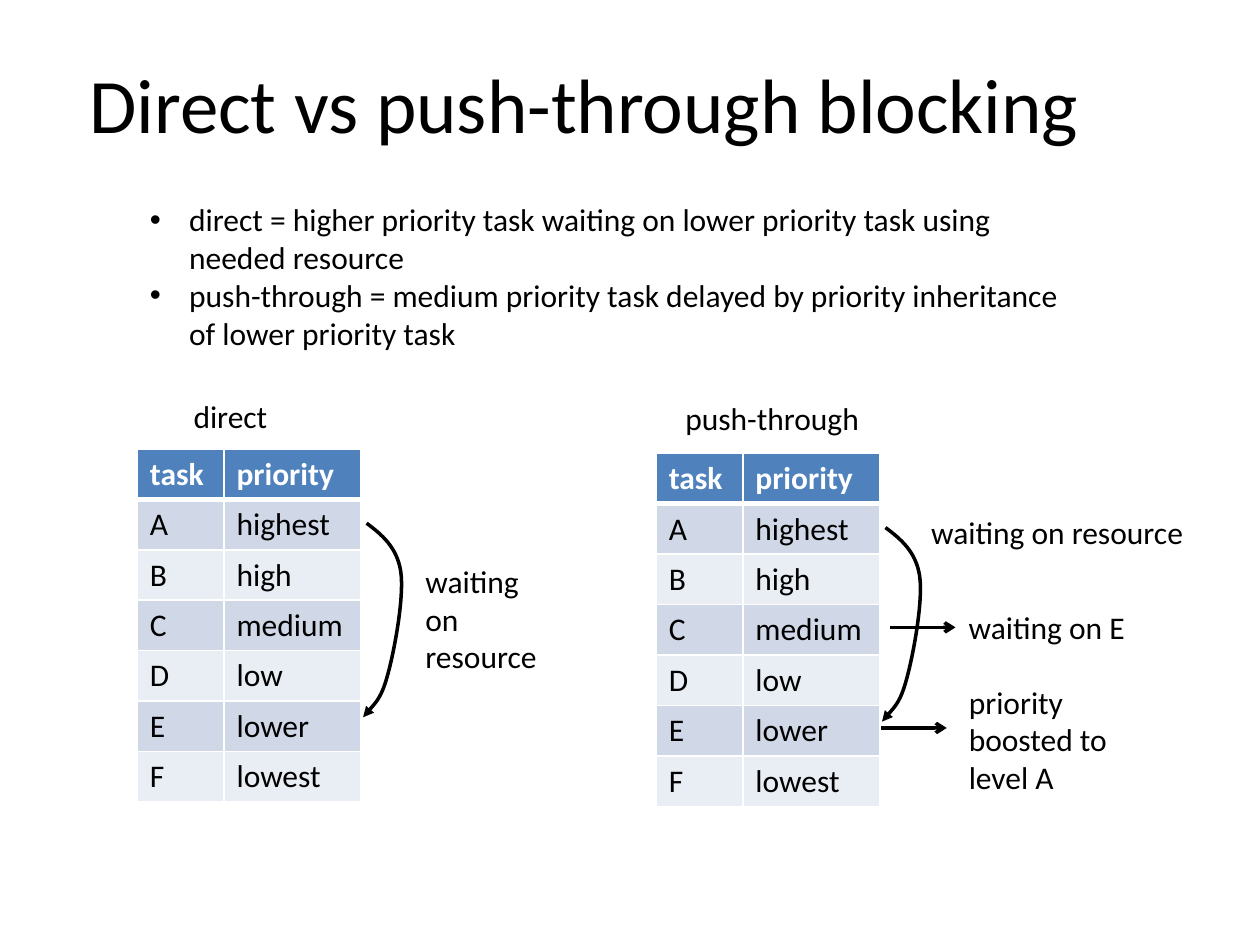
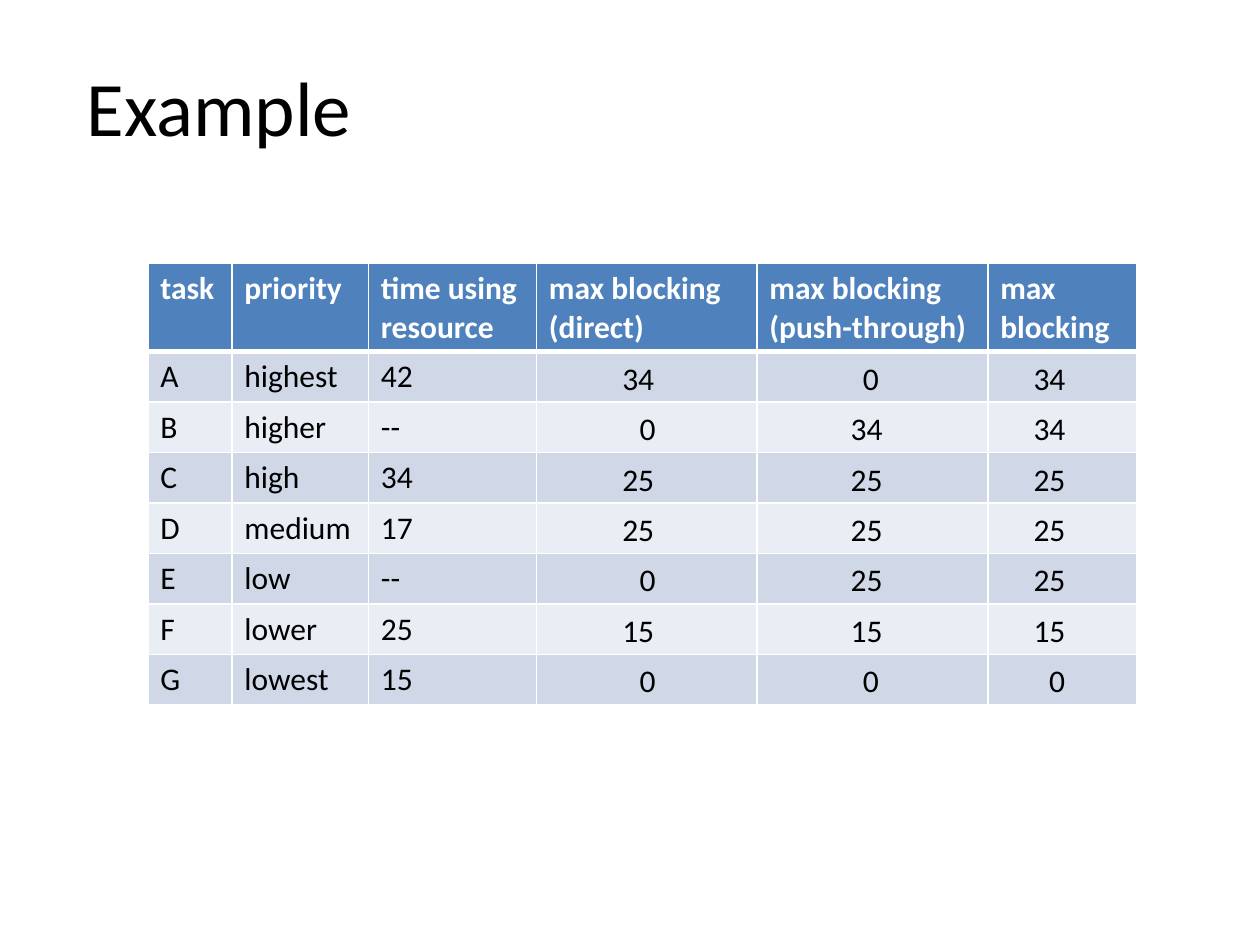
from lxml import etree
from pptx import Presentation
from pptx.dml.color import RGBColor
from pptx.enum.shapes import MSO_CONNECTOR
from pptx.oxml.ns import qn
from pptx.util import Pt

STRAIGHT = MSO_CONNECTOR.STRAIGHT
FONT = "Calibri"
COLORS = {
    "text": "000000",
    "header": "4F81BD",
    "odd row": "D0D8E8",
    "even row": "E9EDF4",
    "white": "FFFFFF",
}
ROW_HEIGHT = 28.8


def add_text(page, text, left, top, width, height=29, size=18, wrap=True):
    """Add a black text box; each line of text becomes a paragraph."""
    box = page.shapes.add_textbox(Pt(left), Pt(top), Pt(width), Pt(height))
    frame = box.text_frame
    frame.text = text
    frame.word_wrap = wrap
    for para in frame.paragraphs:
        for span in para.runs:
            span.font.name = FONT
            span.font.size = Pt(size)
            span.font.color.rgb = RGBColor.from_string(COLORS["text"])
    return box


def add_banded_table(page, rows, left, top, widths, header_height=ROW_HEIGHT):
    """Add a table with a blue header, banded rows and white cell borders."""
    height = header_height + ROW_HEIGHT * (len(rows) - 1)
    table = page.shapes.add_table(
        len(rows), len(widths), Pt(left), Pt(top), Pt(sum(widths)), Pt(height)
    ).table
    for column, width in zip(table.columns, widths):
        column.width = Pt(width)
    for r, values in enumerate(rows):
        is_header = r == 0
        table.rows[r].height = Pt(header_height if is_header else ROW_HEIGHT)
        fill = "header" if is_header else "odd row" if r % 2 else "even row"
        for c, cell in enumerate(table.rows[r].cells):
            properties = cell._tc.get_or_add_tcPr()
            for side in ("L", "R", "T", "B"):
                under_header = (r, side) in ((0, "B"), (1, "T"))
                border = etree.SubElement(properties, qn("a:ln" + side))
                border.set("w", str(Pt(3 if under_header else 1)))
                paint = etree.SubElement(border, qn("a:solidFill"))
                etree.SubElement(paint, qn("a:srgbClr")).set("val", COLORS["white"])
            cell.fill.solid()
            cell.fill.fore_color.rgb = RGBColor.from_string(COLORS[fill])
            if c < len(values):
                cell.text = values[c]
                font = cell.text_frame.paragraphs[0].runs[0].font
                font.name = FONT
                font.size = Pt(18)
                font.bold = is_header
                font.color.rgb = RGBColor.from_string(COLORS["white" if is_header else "text"])


deck = Presentation()
deck.slide_width = Pt(720)
deck.slide_height = Pt(540)
blank = deck.slide_layouts[6]

# Slide 1: two kinds of blocking
page = deck.slides.add_slide(blank)
add_text(page, "Direct vs push-through blocking", 44, 29, 586, 60.5, size=44, wrap=False)

definitions = add_text(
    page,
    "direct = higher priority task waiting on lower priority task using needed resource\n"
    "push-through = medium priority task delayed by priority inheritance of lower priority task",
    78.5, 111, 552, 94,
)
for para in definitions.text_frame.paragraphs:
    properties = para._p.get_or_add_pPr()
    properties.set("marL", str(Pt(22.5)))
    properties.set("indent", str(Pt(-22.5)))
    etree.SubElement(properties, qn("a:buFont")).set("typeface", "Arial")
    etree.SubElement(properties, qn("a:buChar")).set("char", "•")

priorities = [
    ("task", "priority"),
    ("A", "highest"),
    ("B", "high"),
    ("C", "medium"),
    ("D", "low"),
    ("E", "lower"),
    ("F", "lowest"),
]
# Bezier points of the curve from task A to task E, measured from the table corner
wait_curve = [
    (131, 42.5),
    (139.7, 49), (148.3, 56.2), (150.5, 70),
    (152.6, 84.3), (147, 114.5), (143.3, 128.2),
    (139.7, 142), (134, 147.6), (129, 153.4),
]
arrows = []
for left, top in ((78.5, 256.5), (375, 259)):
    add_banded_table(page, priorities, left, top, (49.5, 78))
    points = [(Pt(left + x), Pt(top + y)) for x, y in wait_curve]
    builder = page.shapes.build_freeform(*points[0])
    builder.add_line_segments(points[1:], close=False)
    curve = builder.convert_to_shape()
    curve.fill.background()
    segments = list(curve._element.iter(qn("a:lnTo")))
    outline = segments[0].getparent()
    for first in range(0, len(segments), 3):
        bezier = etree.SubElement(outline, qn("a:cubicBezTo"))
        for segment in segments[first:first + 3]:
            bezier.append(segment[0])
            outline.remove(segment)
    arrows.append((curve, "triangle"))

for left, y in ((503.5, 416), (508.5, 358.5)):
    arrow = page.shapes.add_connector(STRAIGHT, Pt(left), Pt(y), Pt(left + 37.5), Pt(y))
    arrows.append((arrow, "arrow"))

for arrow, head in arrows:
    arrow.line.width = Pt(2)
    arrow.line.color.rgb = RGBColor.from_string(COLORS["text"])
    properties = arrow._element.spPr
    etree.SubElement(properties.find(qn("a:ln")), qn("a:tailEnd")).set("type", head)
    etree.SubElement(properties, qn("a:effectLst"))

add_text(page, "direct", 103.5, 223.5, 78.5)
add_text(page, "push-through", 384.5, 224.5, 132)
add_text(page, "waiting\non resource", 236, 317.5, 84, 72.5)
add_text(page, "waiting on resource", 525, 289.5, 173.5)
add_text(page, "waiting on E", 546.5, 344, 116)
add_text(page, "priority boosted to level A", 546.5, 386.5, 95, 72.5)

# Slide 2: worked example
page = deck.slides.add_slide(blank)
add_text(page, "Example", 42.5, 30.5, 167, 60.5, size=44, wrap=False)

resource_times = [
    ("task", "priority", "time using resource", "max blocking (direct)",
     "max blocking (push-through)", "max blocking"),
    ("A", "highest", "42"),
    ("B", "higher", "--"),
    ("C", "high", "34"),
    ("D", "medium", "17"),
    ("E", "low", "--"),
    ("F", "lower", "25"),
    ("G", "lowest", "15"),
]
add_banded_table(page, resource_times, 84.5, 150.5, (48, 78, 96, 126, 132, 85), header_height=50)

# Each column of answers: left of two-digit boxes, left of one-digit boxes, values
answers = [
    (348.5, 358.5, ("34", "0", "25", "25", "0", "15", "0")),
    (479, 486, ("0", "34", "25", "25", "25", "15", "0")),
    (583.5, 592.5, ("34", "34", "25", "25", "25", "15", "0")),
]
for wide_left, narrow_left, values in answers:
    for row, value in enumerate(values):
        left, width = (wide_left, 38) if len(value) == 2 else (narrow_left, 24.5)
        add_text(page, value, left, 201.5 + row * ROW_HEIGHT, width)

deck.save("out.pptx")
